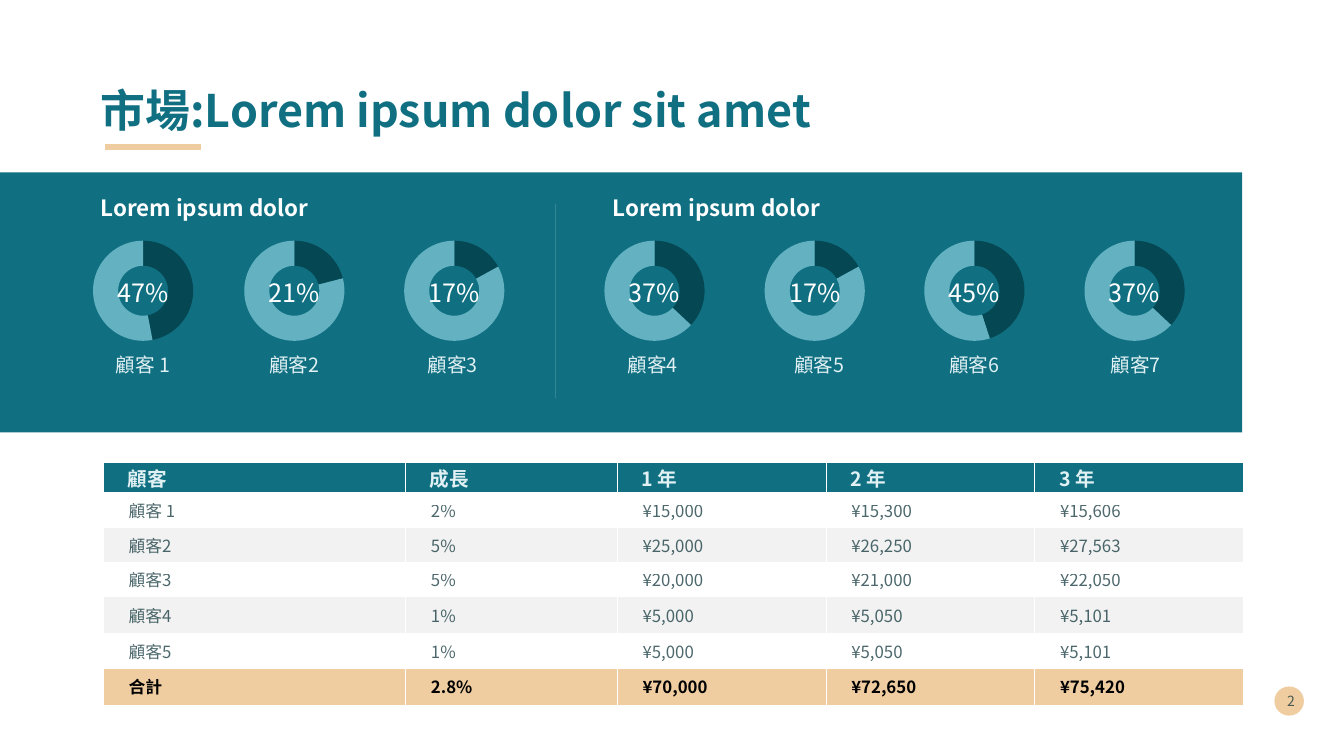
from lxml import etree
from pptx import Presentation
from pptx.chart.data import CategoryChartData
from pptx.dml.color import RGBColor
from pptx.enum.chart import XL_CHART_TYPE
from pptx.enum.shapes import MSO_CONNECTOR, MSO_SHAPE
from pptx.enum.text import MSO_ANCHOR, PP_ALIGN
from pptx.oxml.ns import qn
from pptx.util import Inches, Pt

DOUGHNUT = XL_CHART_TYPE.DOUGHNUT
STRAIGHT = MSO_CONNECTOR.STRAIGHT
RECTANGLE, OVAL = MSO_SHAPE.RECTANGLE, MSO_SHAPE.OVAL
TOP, MIDDLE = MSO_ANCHOR.TOP, MSO_ANCHOR.MIDDLE
LEFT, CENTER, RIGHT = PP_ALIGN.LEFT, PP_ALIGN.CENTER, PP_ALIGN.RIGHT
FONT = "Noto Sans CJK JP"
COLORS = {name: RGBColor.from_string(value) for name, value in {
    "teal": "107082", "deep": "054854", "sky": "64B2C1", "sand": "F0CDA1",
    "ink": "00292E", "mist": "E0F0F3", "stripe": "F2F2F2",
    "white": "FFFFFF", "black": "000000"}.items()}

deck = Presentation()
deck.slide_width, deck.slide_height = Inches(13.33), Inches(7.5)
page = deck.slides.add_slide(deck.slide_layouts[6])
# All lengths are percentages of the slide's width or height
COL, ROW = deck.slide_width / 100, deck.slide_height / 100


def area(left, top, width, height):
    return int(left * COL), int(top * ROW), int(width * COL), int(height * ROW)


def write(frame, text, size, color, bold=False, align=LEFT, anchor=TOP, opacity=100):
    frame.word_wrap = True
    frame.vertical_anchor = anchor
    para = frame.paragraphs[0]
    para.text, para.alignment = text, align
    font = para.font
    font.name, font.size, font.bold = FONT, Pt(size), bold
    font.color.rgb = COLORS[color]
    props = para._p.pPr.find(qn("a:defRPr"))
    etree.SubElement(props, qn("a:ea"), typeface=FONT)
    if opacity < 100:
        etree.SubElement(props.find(".//" + qn("a:srgbClr")), qn("a:alpha"),
                         val=str(opacity * 1000))
    return para


# Teal band and page-number disc
for kind, place, color in [(RECTANGLE, (0, 22.8, 92.42, 34.4), "teal"),
                           (OVAL, (94.82, 90.8, 2.2, 3.87), "sand")]:
    shape = page.shapes.add_shape(kind, *area(*place))
    shape.shadow.inherit = False
    shape.fill.solid()
    shape.fill.fore_color.rgb = COLORS[color]
    shape.line.fill.background()

# Title, section headings and page number
for place, text, size, color, bold, align, anchor, opacity in [
        ((6.75, 5.33, 86.27, 19.33), "市場:Lorem ipsum dolor sit amet", 32, "teal", True, LEFT, MIDDLE, 100),
        ((6.75, 25.47, 31.06, 5.07), "Lorem ipsum dolor", 16, "white", True, LEFT, TOP, 100),
        ((44.86, 25.47, 42.9, 5.07), "Lorem ipsum dolor", 16, "white", True, LEFT, TOP, 100),
        ((94.15, 90, 2.93, 5.33), "2", 10, "ink", False, RIGHT, MIDDLE, 70)]:
    box = page.shapes.add_textbox(*area(*place))
    para = write(box.text_frame, text, size, color, bold, align, anchor, opacity)
    if bold:
        para.line_spacing = 0.9

# Title underline and divider between the two groups
for left, top, right, bottom, color, weight, opacity in [
        (7.8, 19.4, 14.93, 19.4, "sand", 4.32, 100),
        (41.34, 26.93, 41.34, 52.67, "mist", 0.25, 25)]:
    x, y, x_end, y_end = area(left, top, right, bottom)
    line = page.shapes.add_connector(STRAIGHT, x, y, x_end, y_end)
    line.line.color.rgb, line.line.width = COLORS[color], Pt(weight)
    etree.SubElement(line._element.spPr, qn("a:effectLst"))
    if opacity < 100:
        etree.SubElement(line._element.spPr.find(".//" + qn("a:srgbClr")),
                         qn("a:alpha"), val=str(opacity * 1000))

# Customer doughnuts: chart centre, label centre, share, label
customers = [
    (10.65, 10.62, 47, "顧客 1"), (21.9, 21.9, 21, "顧客2"),
    (33.8, 33.68, 17, "顧客3"), (48.7, 48.57, 37, "顧客4"),
    (60.62, 60.95, 17, "顧客5"), (72.5, 72.5, 45, "顧客6"),
    (84.42, 84.5, 37, "顧客7")]
CHART_WIDTH, TEXT_WIDTH = 12.15, 7.4
for center, label_center, share, label in customers:
    data = CategoryChartData()
    data.categories = ["1", "2"]
    data.add_series("Series 1", (share, 100 - share))
    chart = page.shapes.add_chart(
        DOUGHNUT, *area(center - CHART_WIDTH / 2, 30, CHART_WIDTH, 16.93), data).chart
    chart.has_legend = chart.has_title = False
    chart.font.name, chart.font.size = "Arial", Pt(10)
    chart.font.color.rgb = COLORS["black"]
    plot = chart.plots[0]
    plot.vary_by_categories = True
    plot._element.find(qn("c:holeSize")).set("val", "67")
    for index, color in enumerate(["deep", "sky"]):
        point = plot.series[0].points[index].format
        point.fill.solid()
        point.fill.fore_color.rgb = COLORS[color]
        point.line.fill.background()
    for middle, top, height, text, size, color in [
            (center, 36.53, 4.27, f"{share}%", 18, "white"),
            (label_center, 46.53, 3.33, label, 14, "mist")]:
        box = page.shapes.add_textbox(*area(middle - TEXT_WIDTH / 2, top, TEXT_WIDTH, height))
        frame = box.text_frame
        frame.margin_left = frame.margin_right = frame.margin_bottom = 0
        frame.margin_top = Inches(0.01)
        write(frame, text, size, color, align=CENTER)

# Revenue table
rows = [
    ("顧客", "成長", "1 年", "2 年", "3 年"),
    ("顧客 1", "2%", "¥15,000", "¥15,300", "¥15,606"),
    ("顧客2", "5%", "¥25,000", "¥26,250", "¥27,563"),
    ("顧客3", "5%", "¥20,000", "¥21,000", "¥22,050"),
    ("顧客4", "1%", "¥5,000", "¥5,050", "¥5,101"),
    ("顧客5", "1%", "¥5,000", "¥5,050", "¥5,101"),
    ("合計", "2.8%", "¥70,000", "¥72,650", "¥75,420")]
widths = [22.5, 15.75, 15.53, 15.53, 15.53]
heights = [4, 4.6, 4.56, 4.6, 4.85, 4.56, 4.95]
table = page.shapes.add_table(
    len(rows), len(widths), *area(7.69, 61.2, sum(widths), sum(heights))).table
for column, width in zip(table.columns, widths):
    column.width = int(width * COL)
for number, (values, height) in enumerate(zip(rows, heights)):
    table.rows[number].height = int(height * ROW)
    header, total = number == 0, number == len(rows) - 1
    if header:
        fill, size, color, opacity = "teal", 14, "mist", 100
    elif total:
        fill, size, color, opacity = "sand", 12, "black", 100
    else:
        fill, size, color, opacity = ("white", "stripe")[number % 2 == 0], 12, "ink", 70
    for cell, value in zip(table.rows[number].cells, values):
        cell.fill.solid()
        cell.fill.fore_color.rgb = COLORS[fill]
        cell.margin_left = 0
        cell.margin_right = 0 if header or total else Inches(0.1)
        cell.margin_top = cell.margin_bottom = 0 if header or total else Inches(0.05)
        cell.vertical_anchor = MIDDLE
        para = write(cell.text_frame, value, size, color, header or total, opacity=opacity)
        para._p.pPr.set("marL", str(Inches(0.24 if header else 0.25)))

deck.save("out.pptx")
